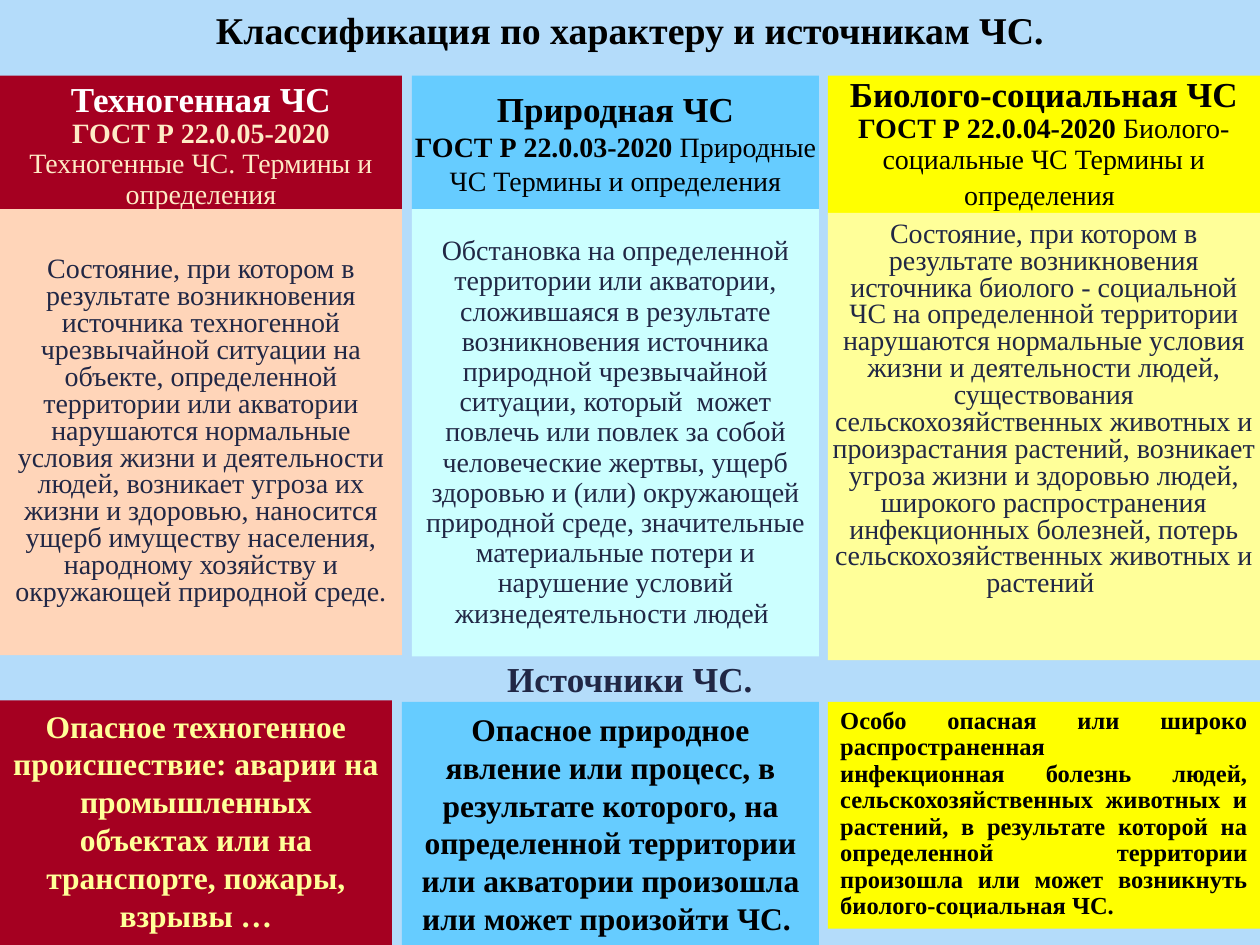
from dataclasses import dataclass

from pptx import Presentation
from pptx.dml.color import RGBColor
from pptx.enum.shapes import MSO_SHAPE
from pptx.enum.text import MSO_ANCHOR, PP_ALIGN
from pptx.util import Inches, Pt

FONT = "Times New Roman"
BLACK, NAVY, CREAM = "000000", "212745", "FEEBC6"
RED, BLUE, YELLOW = "A50021", "66CCFF", "FFFF00"
TOP, MIDDLE = MSO_ANCHOR.TOP, MSO_ANCHOR.MIDDLE


@dataclass
class Span:
    text: str
    size: float = 16
    color: str = BLACK
    bold: bool = False


@dataclass
class Panel:
    left: float
    top: float
    width: float
    height: float
    fill: str
    paragraphs: list[list[Span]]
    anchor: MSO_ANCHOR = TOP
    insets: tuple[float, float] = (0.1, 0.05)
    spacing: float = 1.0
    align: PP_ALIGN = PP_ALIGN.CENTER


def rgb(value: str) -> RGBColor:
    return RGBColor.from_string(value)


def add_span(para, text: str, *, size: float, color: str, bold: bool) -> None:
    run = para.add_run()
    run.text = text
    run.font.name = FONT
    run.font.size = Pt(size)
    run.font.bold = bold
    run.font.color.rgb = rgb(color)


def write(frame, paragraphs: list[list[Span]], *, anchor=TOP, insets=(0.1, 0.05),
          spacing: float = 1.0, align=PP_ALIGN.CENTER) -> None:
    frame.word_wrap = True
    frame.vertical_anchor = anchor
    frame.margin_left = frame.margin_right = Inches(insets[0])
    frame.margin_top = frame.margin_bottom = Inches(insets[1])
    for index, spans in enumerate(paragraphs):
        para = frame.add_paragraph() if index else frame.paragraphs[0]
        para.alignment = align
        para.line_spacing = spacing
        para.space_before = Pt(0)
        for span in spans:
            add_span(para, span.text, size=span.size, color=span.color, bold=span.bold)


def add_panel(page, panel: Panel) -> None:
    box = page.shapes.add_shape(
        MSO_SHAPE.RECTANGLE, Inches(panel.left), Inches(panel.top),
        Inches(panel.width), Inches(panel.height))
    box.shadow.inherit = False
    box.fill.solid()
    box.fill.fore_color.rgb = rgb(panel.fill)
    box.line.fill.background()
    write(box.text_frame, panel.paragraphs, anchor=panel.anchor,
          insets=panel.insets, spacing=panel.spacing, align=panel.align)


def heading(name: str, standard: str, subject: str, *, name_color: str = BLACK,
            color: str = BLACK) -> list[list[Span]]:
    return [[Span(name, 20, name_color, True)],
            [Span(standard + " ", color=color, bold=True), Span(subject, color=color)]]


def strong(text: str, size: float, color: str = BLACK) -> list[Span]:
    return [Span(text, size, color, True)]


# Headings of the three classes; the last one ends with a taller space
biosocial = heading("Биолого-социальная ЧС", "ГОСТ Р 22.0.04-2020",
                    "Биолого-социальные ЧС Термины и определения")
biosocial[1].append(Span(" ", 20))
headings = [
    Panel(0, 0.6, 3.19, 1.1, RED,
          heading("Техногенная ЧС", "ГОСТ Р 22.0.05-2020",
                  "Техногенные ЧС. Термины и определения",
                  name_color="FFFFFF", color=CREAM),
          insets=(0.02, 0.05), spacing=0.9),
    Panel(3.27, 0.6, 3.23, 1.06, BLUE,
          heading("Природная ЧС", "ГОСТ Р 22.0.03-2020",
                  "Природные ЧС Термины и определения"),
          anchor=MIDDLE, insets=(0.02, 0.01)),
    Panel(6.57, 0.6, 3.43, 1.11, YELLOW, biosocial, insets=(0.02, 0.01), spacing=0.9),
]

# Definitions
definitions = [
    Panel(0, 1.66, 3.19, 3.54, "FFD5B9", [[Span(
        "Состояние, при котором в результате возникновения источника техногенной "
        "чрезвычайной ситуации на объекте, определенной территории или акватории "
        "нарушаются нормальные условия жизни и деятельности людей, возникает угроза "
        "их жизни и здоровью, наносится ущерб имуществу населения, народному "
        "хозяйству и окружающей природной среде.", color=NAVY)]],
        anchor=MIDDLE, insets=(0.02, 0.05), spacing=0.8),
    Panel(3.27, 1.66, 3.23, 3.55, "CCFFFF", [[Span(
        "Обстановка на определенной территории или акватории, сложившаяся в "
        "результате возникновения источника природной чрезвычайной ситуации, "
        "который  может повлечь или повлек за собой человеческие жертвы, ущерб "
        "здоровью и (или) окружающей природной среде, значительные материальные "
        "потери и нарушение условий жизнедеятельности людей ", color=NAVY)]],
        anchor=MIDDLE, insets=(0.02, 0.05), spacing=0.9),
    Panel(6.57, 1.69, 3.43, 3.55, "FFFF99", [[Span(
        "Состояние, при котором в результате возникновения источника биолого - "
        "социальной ЧС на определенной территории нарушаются нормальные условия "
        "жизни и деятельности людей, существования сельскохозяйственных животных и "
        "произрастания растений, возникает угроза жизни и здоровью людей, широкого "
        "распространения инфекционных болезней, потерь сельскохозяйственных "
        "животных и растений ", color=NAVY)]],
        insets=(0.02, 0.07), spacing=0.8),
]

# Sources
sources = [
    Panel(0, 5.56, 3.11, 1.94, RED, [strong(
        "Опасное техногенное происшествие: аварии на промышленных объектах или на "
        "транспорте, пожары, взрывы …", 18, "FFFF99")]),
    Panel(3.19, 5.57, 3.31, 1.93, BLUE, [strong(
        "Опасное природное явление или процесс, в результате которого, на "
        "определенной территории или акватории произошла или может произойти ЧС. ",
        18)], anchor=MIDDLE),
    Panel(6.57, 5.57, 3.43, 1.8, YELLOW, [
        strong("Особо опасная или широко распространенная", 14),
        strong("инфекционная болезнь людей, сельскохозяйственных животных и растений, "
               "в результате которой на определенной территории произошла или может "
               "возникнуть биолого-социальная ЧС.", 14)],
        spacing=0.9, align=PP_ALIGN.JUSTIFY),
]


def main() -> None:
    deck = Presentation()
    deck.slide_width, deck.slide_height = Inches(10), Inches(7.5)
    page = deck.slides.add_slide(deck.slide_layouts[5])
    page.background.fill.solid()
    page.background.fill.fore_color.rgb = rgb("B4DCFA")

    # Title
    title = page.shapes.title
    title.left, title.top = Inches(0.5), Inches(0)
    title.width, title.height = Inches(9), Inches(0.68)
    write(title.text_frame, [strong("Классификация по характеру и источникам ЧС.", 21.6)])

    for panel in headings + definitions:
        add_panel(page, panel)

    # Caption over the sources
    caption = page.shapes.add_textbox(Inches(0), Inches(5.17), Inches(10), Inches(0.44))
    write(caption.text_frame, [strong("Источники ЧС.", 20, NAVY)])

    for panel in sources:
        add_panel(page, panel)
    deck.save("out.pptx")


if __name__ == "__main__":
    main()
